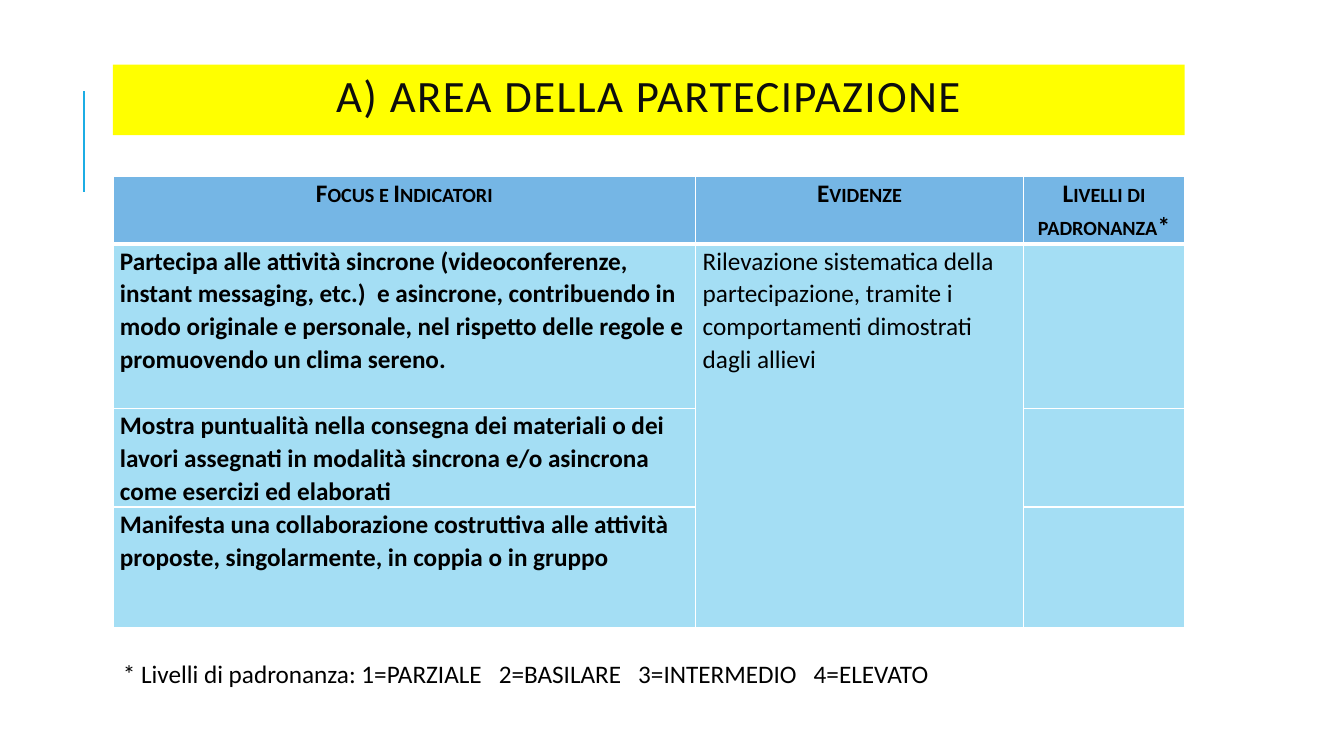
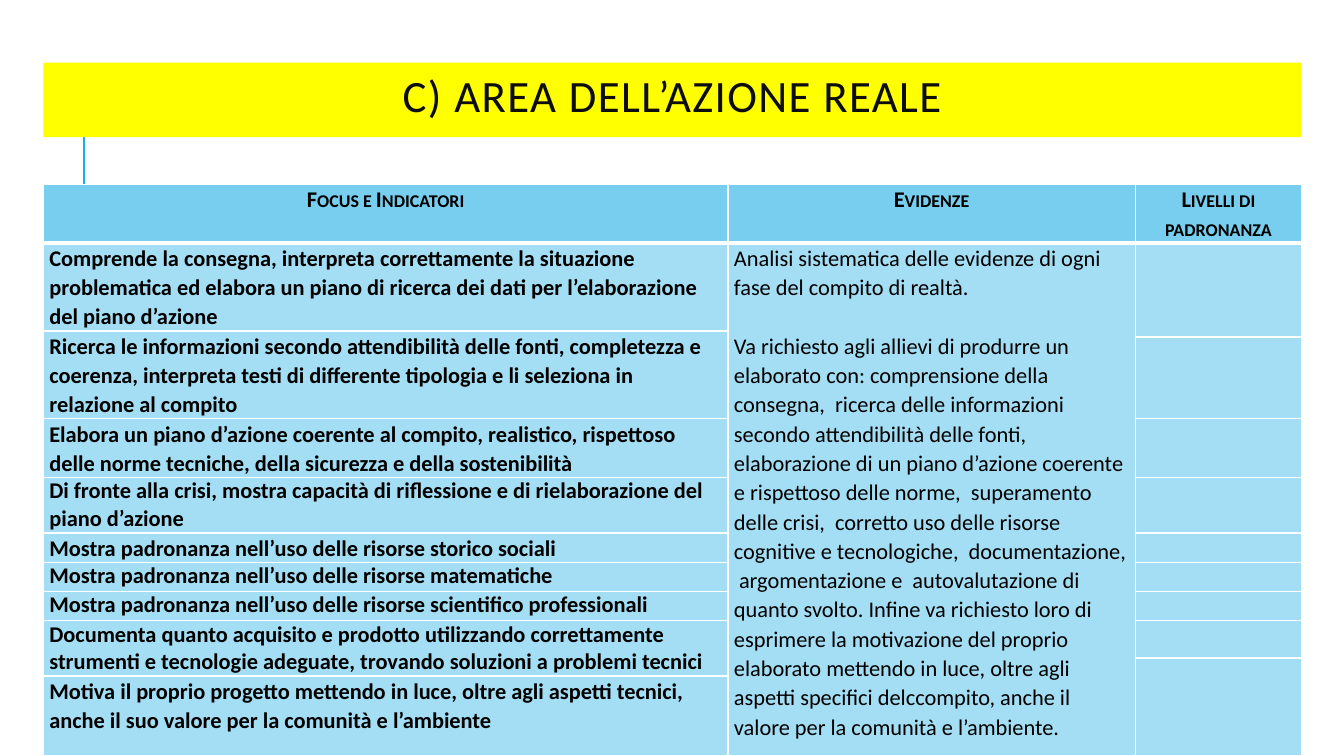
"""Build two slides of an assessment rubric, each a title band over a table."""
import pptx
import pptx.dml.color
import pptx.enum.shapes
import pptx.enum.text
import pptx.oxml.ns
import pptx.util
import lxml.etree

Inches = pptx.util.Inches
RGB = pptx.dml.color.RGBColor.from_string
CENTER = pptx.enum.text.PP_ALIGN.CENTER
COLORS = {"band": "FFFF00", "title": "0D0D0D", "text": "000000", "accent": "1CADE4",
          "body": "A4DEF4", "border": "FFFFFF"}
FONT = "Calibri"
HEADERS = ["Focus e Indicatori", "Evidenze", "Livelli di padronanza"]
LOOSE = 1.07


def write(para, text, size=18, color="text", bold=False, align=None, line=None,
          before=0, **attributes):
    para.alignment = align
    para.line_spacing = line
    para.space_before = pptx.util.Pt(before)
    span = para.add_run()
    span.text = text
    span.font.name = FONT
    span.font.size = pptx.util.Pt(size)
    span.font.bold = bold
    span.font.color.rgb = RGB(COLORS[color])
    for name, value in attributes.items():
        span.font._element.set(name, value)


def add_borders(cell, bottom):
    properties = cell._tc.get_or_add_tcPr()
    for side, width in (("lnL", 1), ("lnR", 1), ("lnT", 1), ("lnB", bottom)):
        border = lxml.etree.SubElement(properties, pptx.oxml.ns.qn("a:" + side),
                                       w=str(pptx.util.Pt(width)))
        fill = lxml.etree.SubElement(border, pptx.oxml.ns.qn("a:solidFill"))
        lxml.etree.SubElement(fill, pptx.oxml.ns.qn("a:srgbClr"), val=COLORS["border"])


AREAS = [
    {
        "title": "A) AREA DELLA PARTECIPAZIONE",
        "band": (1.12, 0.64, 10.63, 0.7),
        "top": 1.75,
        "columns": [5.78, 3.25, 1.6],
        "rows": [0.67, 1.63, 0.98, 1.2],
        "size": 18,
        "inset": 0.07,
        "header": "75B6E5",
        "star": "*",
        "merges": [(1, 1, 3, 1)],
        "indicators": {
            1: ("Partecipa alle attività sincrone (videoconferenze, instant messaging, etc.)  e "
                "asincrone, contribuendo in modo originale e personale, nel rispetto delle "
                "regole e promuovendo un clima sereno.", LOOSE),
            2: ("Mostra puntualità nella consegna dei materiali o dei lavori assegnati in "
                "modalità sincrona e/o asincrona come esercizi ed elaborati", LOOSE),
            3: ("Manifesta una collaborazione costruttiva alle attività proposte, "
                "singolarmente, in coppia o in gruppo", LOOSE),
        },
        "evidence": ["Rilevazione sistematica della partecipazione, tramite i comportamenti "
                     "dimostrati dagli allievi"],
        "note": "* Livelli di padronanza: 1=PARZIALE   2=BASILARE   3=INTERMEDIO   4=ELEVATO",
    },
    {
        "title": "C) AREA DELL’AZIONE REALE",
        "band": (0.43, 0.62, 12.48, 0.74),
        "top": 1.83,
        "columns": [6.79, 4.04, 1.65],
        "rows": [0.58, 0.87, 0.06, 0.81, 0.58, 0.55, 0.29, 0.29, 0.29, 0.37, 0.18, 0.79],
        "size": 16,
        "inset": 0.06,
        "header": "77CEEF",
        "star": "",
        "merges": [(1, 1, 11, 1), (1, 2, 2, 2), (2, 0, 3, 0), (9, 0, 10, 0), (10, 2, 11, 2)],
        "indicators": {
            1: ("Comprende la consegna, interpreta correttamente la situazione problematica ed "
                "elabora un piano di ricerca dei dati per l’elaborazione del piano d’azione",
                LOOSE),
            2: ("Ricerca le informazioni secondo attendibilità delle fonti, completezza e "
                "coerenza, interpreta testi di differente tipologia e li seleziona in relazione "
                "al compito", LOOSE),
            4: ("Elabora un piano d’azione coerente al compito, realistico, rispettoso delle "
                "norme tecniche, della sicurezza e della sostenibilità", LOOSE),
            5: ("Di fronte alla crisi, mostra capacità di riflessione e di rielaborazione del "
                "piano d’azione", 1.0),
            6: ("Mostra padronanza nell’uso delle risorse storico sociali", LOOSE),
            7: ("Mostra padronanza nell’uso delle risorse matematiche", 1.0),
            8: ("Mostra padronanza nell’uso delle risorse scientifico professionali", 1.0),
            9: ("Documenta quanto acquisito e prodotto utilizzando correttamente strumenti e "
                "tecnologie adeguate, trovando soluzioni a problemi tecnici", 1.0),
            11: ("Motiva il proprio progetto mettendo in luce, oltre agli aspetti tecnici, "
                 "anche il suo valore per la comunità e l’ambiente", LOOSE),
        },
        "evidence": [
            "Analisi sistematica delle evidenze di ogni fase del compito di realtà.",
            "Va richiesto agli allievi di produrre un elaborato con: comprensione della "
            "consegna,  ricerca delle informazioni secondo attendibilità delle fonti,  "
            "elaborazione di un piano d’azione coerente e rispettoso delle norme,  superamento "
            "delle crisi,  corretto uso delle risorse cognitive e tecnologiche,  "
            "documentazione,  argomentazione e  autovalutazione di quanto svolto. Infine va "
            "richiesto loro di esprimere la motivazione del proprio elaborato mettendo in luce, "
            "oltre agli aspetti specifici delccompito, anche il valore per la comunità e "
            "l’ambiente.",
        ],
        "note": None,
    },
]

deck = pptx.Presentation()
deck.slide_width = Inches(13.33)
deck.slide_height = Inches(7.5)
layout = deck.slide_layouts[5]

for area in AREAS:
    page = deck.slides.add_slide(layout)
    left, top, width, height = (Inches(value) for value in area["band"])
    size = area["size"]

    if area is AREAS[0]:
        accent = page.shapes.add_connector(pptx.enum.shapes.MSO_CONNECTOR.STRAIGHT,
                                           Inches(0.83), Inches(1.9), Inches(0.83), Inches(0.9))
        accent.line.color.rgb = RGB(COLORS["accent"])
        accent.line.width = pptx.util.Pt(1.5)
        lxml.etree.SubElement(accent.element.spPr, pptx.oxml.ns.qn("a:effectLst"))
        layout.shapes.element.append(accent.element)

    title = page.shapes.title
    title.left, title.top, title.width, title.height = left, top, width, height
    title.fill.solid()
    title.fill.fore_color.rgb = RGB(COLORS["band"])
    title.text_frame.vertical_anchor = pptx.enum.text.MSO_ANCHOR.MIDDLE
    write(title.text_frame.paragraphs[0], area["title"], size=32, color="title",
          align=CENTER, line=0.8, spc="100")

    table = page.shapes.add_table(len(area["rows"]), len(area["columns"]), left,
                                  Inches(area["top"]), width, Inches(sum(area["rows"]))).table
    table.first_row = False
    table.horz_banding = False
    for column, column_width in zip(table.columns, area["columns"]):
        column.width = Inches(column_width)
    for row_index, (row, row_height) in enumerate(zip(table.rows, area["rows"])):
        row.height = Inches(row_height)
        for cell in row.cells:
            cell.margin_left = cell.margin_right = Inches(area["inset"])
            cell.margin_top = cell.margin_bottom = 0
            add_borders(cell, bottom=1 if row_index else 3)
            cell.fill.solid()
            cell.fill.fore_color.rgb = RGB(COLORS["body"] if row_index else area["header"])
            lxml.etree.SubElement(cell.text_frame.paragraphs[0]._p,
                                  pptx.oxml.ns.qn("a:endParaRPr"), sz=str(size * 100))
    for first_row, first_column, last_row, last_column in area["merges"]:
        table.cell(first_row, first_column).merge(table.cell(last_row, last_column))

    for column_index, header in enumerate(HEADERS):
        para = table.cell(0, column_index).text_frame.paragraphs[0]
        write(para, header, size=size, bold=True, align=CENTER, line=LOOSE, cap="small")
    if area["star"]:
        write(para, area["star"], size=size, bold=True, align=CENTER, line=LOOSE)
    for row_index, (indicator, spacing) in area["indicators"].items():
        write(table.cell(row_index, 0).text_frame.paragraphs[0], indicator, size=size,
              bold=True, line=spacing)
    frame = table.cell(1, 1).text_frame
    for index, evidence in enumerate(area["evidence"]):
        para = frame.add_paragraph() if index else frame.paragraphs[0]
        write(para, evidence, size=size, line=LOOSE, before=21 if index else 0)

    if area["note"]:
        box = page.shapes.add_textbox(left, Inches(6.48), width, Inches(0.4))
        box.text_frame.word_wrap = True
        write(box.text_frame.paragraphs[0], area["note"])

deck.save("out.pptx")
